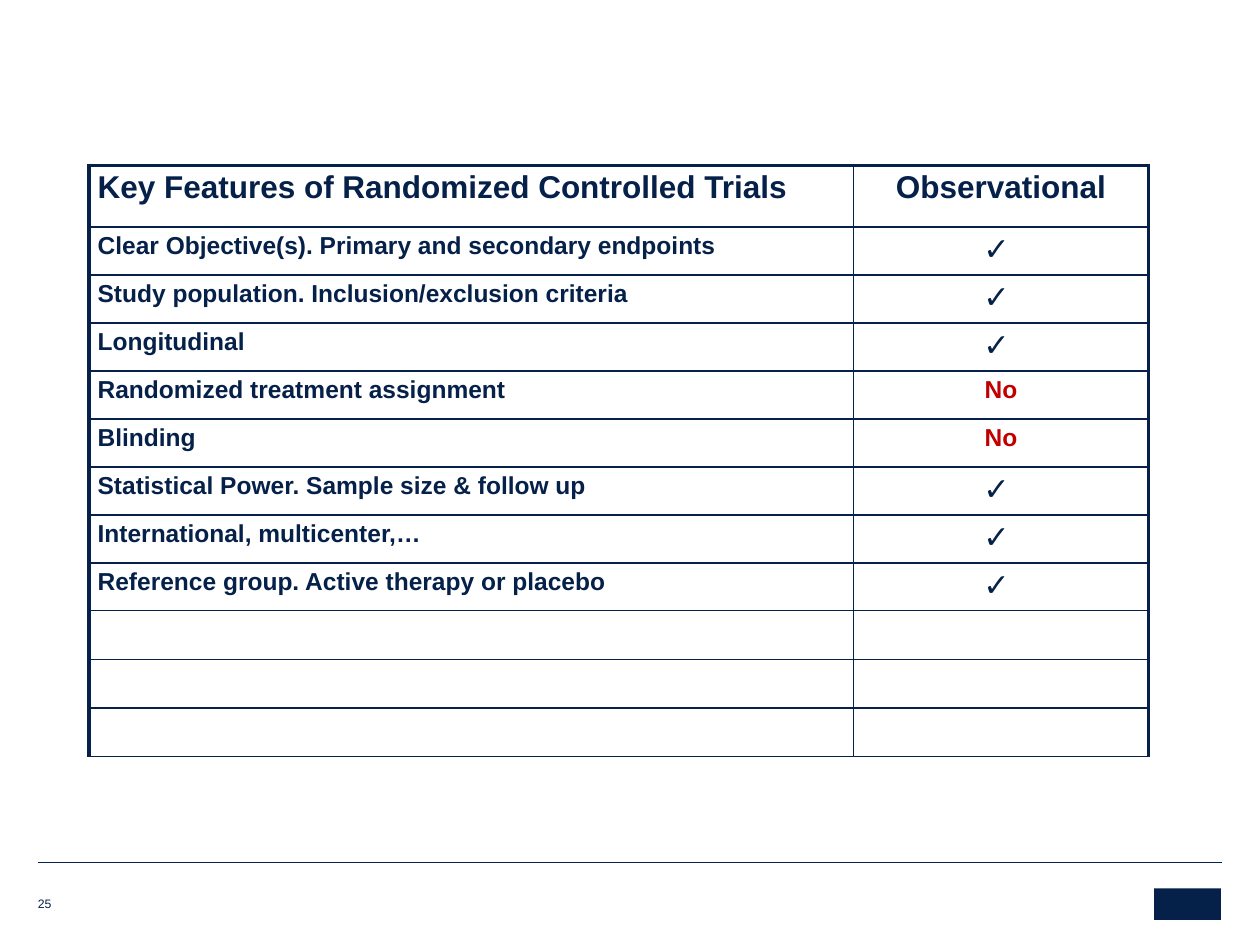
from dataclasses import dataclass

from lxml.etree import SubElement
from pptx import Presentation
from pptx.dml.color import RGBColor
from pptx.enum.shapes import MSO_CONNECTOR, MSO_SHAPE
from pptx.enum.text import MSO_ANCHOR, PP_ALIGN
from pptx.oxml import parse_xml
from pptx.oxml.ns import nsdecls, qn
from pptx.util import Inches, Pt


@dataclass(frozen=True)
class Theme:
    """Colours, type sizes and line widths of the slide."""

    navy: str = "052049"
    red: str = "C00000"
    font: str = "Arial"
    heading: int = 18
    body: int = 14
    tick: int = 18
    page: int = 7
    frame: float = 2.25
    inner: float = 1
    rule: float = 0.25


THEME = Theme()
TICK = "✓"
COLUMNS, ROWS = 100, 75
FEATURES = [
    ("Key Features of Randomized Controlled Trials", "Observational"),
    ("Clear Objective(s). Primary and secondary endpoints", TICK),
    ("Study population. Inclusion/exclusion criteria", TICK),
    ("Longitudinal", TICK),
    ("Randomized treatment assignment", "No"),
    ("Blinding", "No"),
    ("Statistical Power. Sample size & follow up", TICK),
    ("International, multicenter,…", TICK),
    ("Reference group. Active therapy or placebo", TICK),
    ("", ""),
    ("", ""),
    ("", ""),
]


def grid(units):
    """Convert grid columns or rows to a length."""
    return Inches(units / 10)


def apply(target, values):
    """Set every attribute named in a dict of format values."""
    for name, value in values.items():
        setattr(target, name, value)


def write(paragraph, text, size, color=THEME.navy, bold=False):
    """Add one formatted run to a paragraph."""
    run = paragraph.add_run()
    run.text = text
    apply(run.font, {"name": THEME.font, "size": Pt(size), "bold": bold})
    run.font.color.rgb = RGBColor.from_string(color)


def write_tick(paragraph):
    """Mark a paragraph with a tick as its bullet."""
    properties = paragraph._p.get_or_add_pPr()
    apply(paragraph, {"alignment": PP_ALIGN.CENTER})
    for name, value in {"marL": "0", "indent": "0"}.items():
        properties.set(name, value)
    SubElement(properties, qn("a:buFont"), typeface=THEME.font)
    SubElement(properties, qn("a:buChar"), char=TICK)
    write(paragraph, " ", THEME.tick)


def set_borders(cell, widths):
    """Draw the left, right, top and bottom borders of a cell."""
    properties = cell._tc.get_or_add_tcPr()
    for position, (side, width) in enumerate(widths.items()):
        border = parse_xml(
            f'<a:ln{side} {nsdecls("a")} w="{Pt(width)}"><a:solidFill>'
            f'<a:srgbClr val="{THEME.navy}"/></a:solidFill></a:ln{side}>'
        )
        properties.insert(position, border)


def fill_cell(cell, text, is_heading, is_answer):
    """Write and frame one cell of the feature table."""
    cell.fill.background()
    apply(cell, {
        "margin_left": Inches(0.07), "margin_right": Inches(0.07),
        "margin_top": Inches(0.04), "margin_bottom": Inches(0.04),
    })
    set_borders(cell, {
        "L": THEME.inner if is_answer else THEME.frame,
        "R": THEME.frame if is_answer else THEME.inner,
        "T": THEME.frame if is_heading else THEME.inner,
        "B": THEME.inner,
    })
    paragraph = cell.text_frame.paragraphs[0]
    if text == TICK:
        write_tick(paragraph)
    elif text:
        size = THEME.heading if is_heading else THEME.body
        apply(paragraph, {
            "alignment": PP_ALIGN.CENTER if is_answer else PP_ALIGN.LEFT,
            "space_before": Pt(size * 0.2),
        })
        color = THEME.red if text == "No" else THEME.navy
        write(paragraph, text, size, color, bold=True)


def add_feature_table(slide):
    """Add the table that compares trials with observational studies."""
    widths = [60.7, 23.4]
    heights = [4.9] + [3.81] * (len(FEATURES) - 1)
    features = slide.shapes.add_table(
        len(heights), len(widths), grid(7.05), grid(13.12),
        grid(sum(widths)), grid(sum(heights)),
    ).table
    apply(features, {"first_row": False, "horz_banding": False})
    for column, width in zip(features.columns, widths):
        column.width = grid(width)
    for row_index, (row, height) in enumerate(zip(features.rows, heights)):
        row.height = grid(height)
        for column_index, text in enumerate(FEATURES[row_index]):
            fill_cell(row.cells[column_index], text, row_index == 0, column_index == 1)


def add_footer_rule(slide):
    """Add the thin rule above the footer."""
    rule = slide.shapes.add_connector(
        MSO_CONNECTOR.STRAIGHT, grid(3), grid(68.4), grid(COLUMNS - 3), grid(68.4)
    )
    rule.line.width = Pt(THEME.rule)
    rule.line.color.rgb = RGBColor.from_string(THEME.navy)
    SubElement(rule._element.spPr, qn("a:effectLst"))


def add_emblem(slide):
    """Add the plain block in the footer's right corner."""
    emblem = slide.shapes.add_shape(
        MSO_SHAPE.RECTANGLE, grid(91.6), grid(70.5), grid(5.3), grid(2.5)
    )
    emblem.shadow.inherit = False
    emblem.fill.solid()
    emblem.fill.fore_color.rgb = RGBColor.from_string(THEME.navy)
    emblem.line.fill.background()


def add_page_number(slide, number):
    """Add the page number in the footer's left corner."""
    frame = slide.shapes.add_textbox(
        grid(3), grid(70.6), grid(2.7), grid(1.7)
    ).text_frame
    apply(frame, {
        "margin_left": 0, "margin_right": 0, "margin_top": 0, "margin_bottom": 0,
        "word_wrap": True, "vertical_anchor": MSO_ANCHOR.BOTTOM,
    })
    write(frame.paragraphs[0], number, THEME.page)


def main():
    """Build the slide and save it."""
    deck = Presentation()
    apply(deck, {"slide_width": grid(COLUMNS), "slide_height": grid(ROWS)})
    slide = deck.slides.add_slide(deck.slide_layouts[6])
    add_footer_rule(slide)
    add_emblem(slide)
    add_feature_table(slide)
    add_page_number(slide, "25")
    deck.save("out.pptx")


if __name__ == "__main__":
    main()
